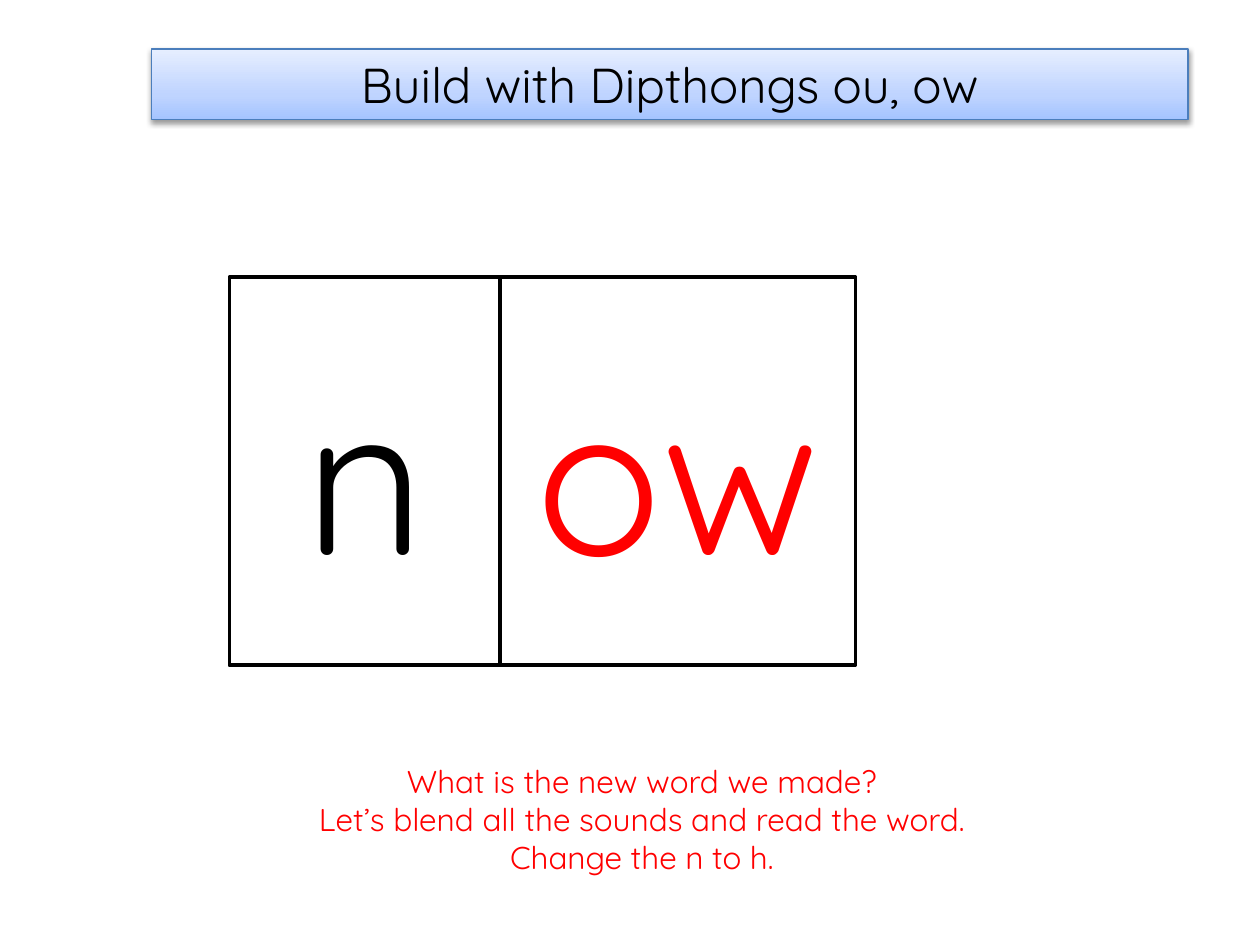
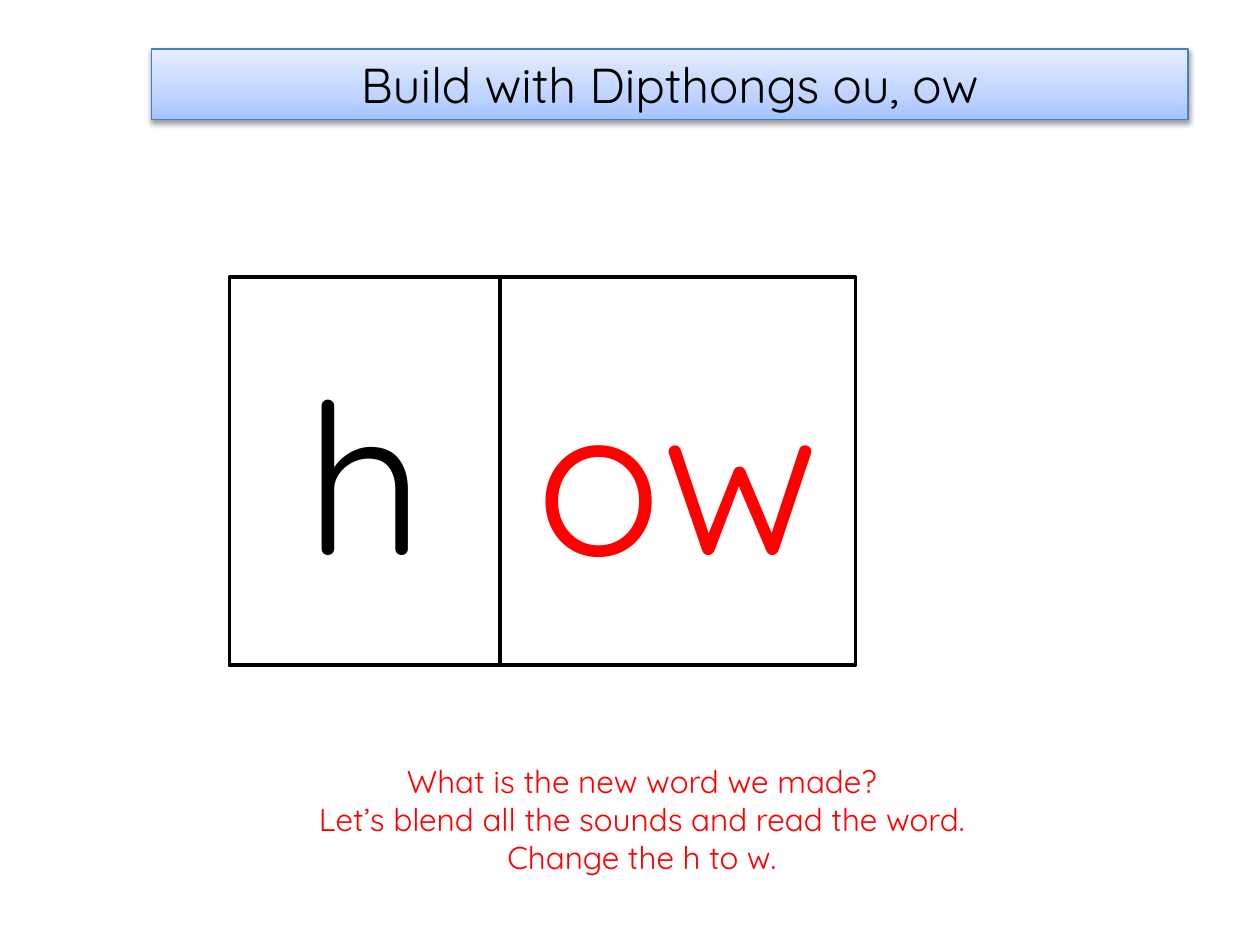
from dataclasses import dataclass

from lxml.etree import SubElement
from pptx import Presentation
from pptx.dml.color import RGBColor
from pptx.enum.shapes import MSO_SHAPE
from pptx.enum.text import MSO_ANCHOR, MSO_AUTO_SIZE, PP_ALIGN
from pptx.oxml.ns import qn
from pptx.shapes.autoshape import Shape
from pptx.slide import Slide
from pptx.text.text import TextFrame
from pptx.util import Inches, Pt


@dataclass(frozen=True)
class Theme:
    font: str = "Quicksand"
    black: str = "000000"
    white: str = "FFFFFF"
    red: str = "FF0000"
    band_line: str = "4B7EBC"
    band_stops: tuple[tuple[int, str], ...] = (
        (0, "A4C4FF"), (35, "BFD4FF"), (100, "E6EEFF"))
    title_size: int = 28
    letter_size: int = 120
    prompt_size: int = 18


@dataclass(frozen=True)
class Box:
    left: float
    top: float
    width: float
    height: float

    def emu(self) -> tuple[int, int, int, int]:
        return (Inches(self.left), Inches(self.top),
                Inches(self.width), Inches(self.height))


@dataclass(frozen=True)
class SoundTile:
    letters: str
    width: float
    color: str


@dataclass(frozen=True)
class WordStep:
    onset: str
    next_onset: str


THEME = Theme()
TITLE = "Build with Dipthongs ou, ow"
RIME = "ow"
TITLE_BOX = Box(1.2, 0.39, 8.23, 0.56)
PROMPT_BOX = Box(1.61, 6, 6.97, 1.01)
TILES_LEFT, TILES_TOP, TILE_HEIGHT = 1.82, 2.2, 3.08
ONSET_WIDTH, RIME_WIDTH = 2.15, 2.82
STEPS = (WordStep("n", "h"), WordStep("h", "w"))


def write_lines(tf: TextFrame, lines: list[str], size: int, color: str) -> None:
    """Fill a text frame with centred lines, one paragraph each."""
    tf.word_wrap = True
    for i, line in enumerate(lines):
        p = tf.paragraphs[0] if i == 0 else tf.add_paragraph()
        p.alignment = PP_ALIGN.CENTER
        r = p.add_run()
        r.text = line
        r.font.name = THEME.font
        r.font.size = Pt(size)
        r.font.color.rgb = RGBColor.from_string(color)


def add_rect(s: Slide, box: Box, line: str, weight: float) -> Shape:
    sp = s.shapes.add_shape(MSO_SHAPE.RECTANGLE, *box.emu())
    sp.shadow.inherit = False
    sp.line.color.rgb = RGBColor.from_string(line)
    sp.line.width = Pt(weight)
    sp.text_frame.vertical_anchor = MSO_ANCHOR.MIDDLE
    return sp


def add_color(parent, color: str):
    return SubElement(parent, qn("a:srgbClr"), val=color)


def add_title_band(s: Slide) -> None:
    sp = add_rect(s, TITLE_BOX, THEME.band_line, 0.75)
    write_lines(sp.text_frame, [TITLE], THEME.title_size, THEME.black)

    # Three-stop gradient running from bottom to top
    sp.fill.gradient()
    sp.fill.gradient_angle = 90
    stops = sp._element.spPr.find(".//" + qn("a:gsLst"))
    for stop in list(stops):
        stops.remove(stop)
    for percent, color in THEME.band_stops:
        add_color(SubElement(stops, qn("a:gs"), pos=str(percent * 1000)), color)

    # Soft shadow below the band
    effects = sp._element.spPr.find(qn("a:effectLst"))
    shadow = SubElement(effects, qn("a:outerShdw"), blurRad=str(Pt(3.1)),
                        dist=str(Pt(1.6)), dir="5400000", rotWithShape="0")
    SubElement(add_color(shadow, THEME.black), qn("a:alpha"), val="38000")


def add_sound_tiles(s: Slide, tiles: list[SoundTile]) -> None:
    left = TILES_LEFT
    for tile in tiles:
        box = Box(left, TILES_TOP, tile.width, TILE_HEIGHT)
        sp = add_rect(s, box, THEME.black, 2)
        sp.fill.solid()
        sp.fill.fore_color.rgb = RGBColor.from_string(THEME.white)
        write_lines(sp.text_frame, [tile.letters], THEME.letter_size, tile.color)
        left += tile.width


def add_prompt(s: Slide, step: WordStep) -> None:
    tf = s.shapes.add_textbox(*PROMPT_BOX.emu()).text_frame
    tf.auto_size = MSO_AUTO_SIZE.SHAPE_TO_FIT_TEXT
    lines = ["What is the new word we made?",
             "Let’s blend all the sounds and read the word.",
             f"Change the {step.onset} to {step.next_onset}."]
    write_lines(tf, lines, THEME.prompt_size, THEME.red)


def main() -> None:
    prs = Presentation()
    prs.slide_width, prs.slide_height = Inches(10), Inches(7.5)
    for step in STEPS:
        s = prs.slides.add_slide(prs.slide_layouts[6])
        add_title_band(s)
        add_sound_tiles(s, [SoundTile(step.onset, ONSET_WIDTH, THEME.black),
                            SoundTile(RIME, RIME_WIDTH, THEME.red)])
        add_prompt(s, step)
    prs.save("out.pptx")


if __name__ == "__main__":
    main()
